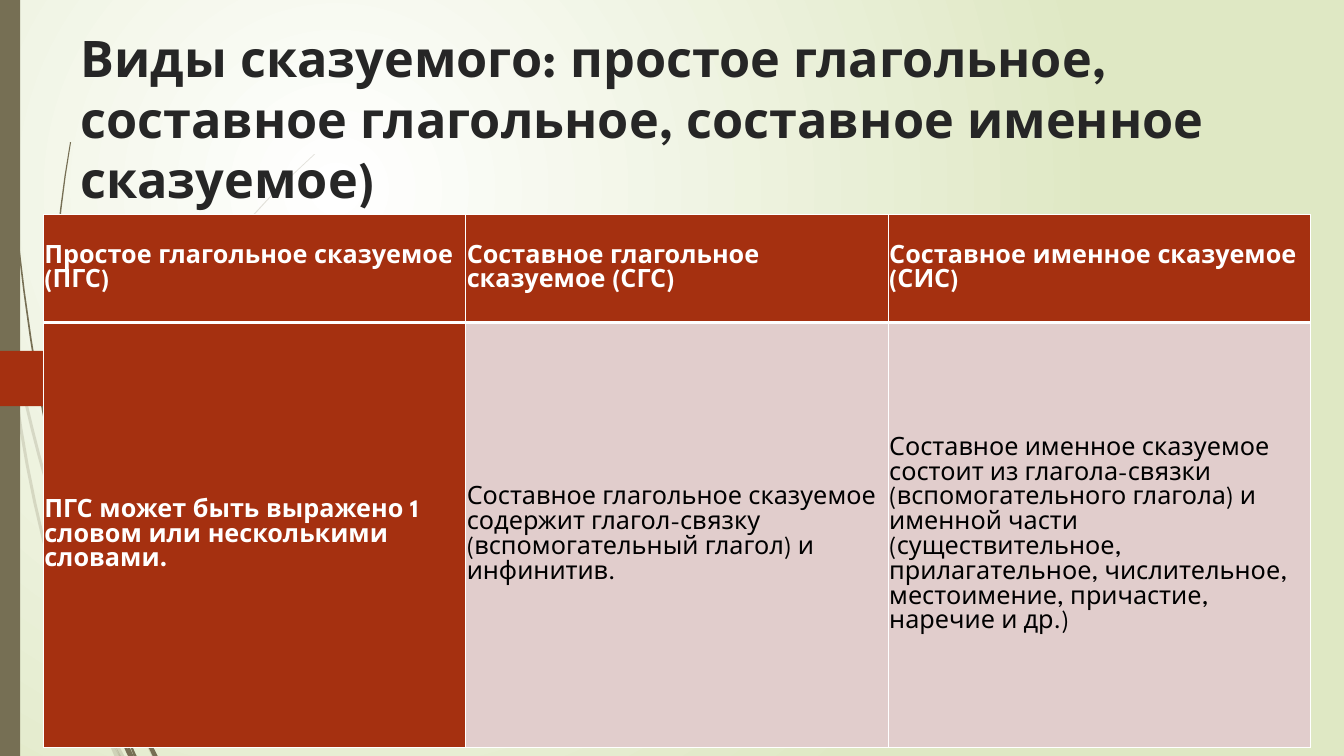
from collections import namedtuple

from lxml.etree import SubElement
from pptx import Presentation
from pptx.dml.color import RGBColor
from pptx.enum.shapes import MSO_SHAPE
from pptx.enum.text import MSO_ANCHOR
from pptx.oxml.ns import qn
from pptx.util import Inches, Pt

FONT = "League Spartan"
WHITE = RGBColor(0xFF, 0xFF, 0xFF)
BLACK = RGBColor(0x00, 0x00, 0x00)
CHARCOAL = RGBColor(0x26, 0x26, 0x26)
PALE_GREEN = RGBColor(0xDF, 0xE8, 0xC4)
OLIVE = RGBColor(0x76, 0x6F, 0x54)
RUST = RGBColor(0xA5, 0x30, 0x10)
PINK = RGBColor(0xE1, 0xCD, 0xCC)

# A blade of grass bends from start through middle to end; its width changes evenly
Blade = namedtuple("Blade", "start middle end start_width end_width")
BLADE_STEPS = 10

FADED_GRASS = [
    Blade((0.02, 2.88), (0.06, 3.17), (0.1, 3.5), 0.04, 0.01),
    Blade((0.15, 3.5), (0.45, 4.75), (0.84, 5.95), 0.03, 0.03),
    Blade((0.11, 3.5), (0.43, 5.35), (1.01, 7.14), 0.03, 0.03),
    Blade((0.87, 5.96), (1.59, 3.48), (3.12, 1.53), 0.03, 0.01),
    Blade((0.88, 6.03), (1.18, 6.77), (1.53, 7.5), 0.01, 0.05),
    Blade((0.93, 6.83), (1.02, 7.15), (1.19, 7.5), 0.01, 0.02),
    Blade((1.01, 7.14), (1.08, 7.33), (1.16, 7.5), 0, 0.05),
    Blade((1.05, 7.11), (1.13, 7.32), (1.21, 7.5), 0, 0.05),
]
SOLID_GRASS = [
    Blade((0.04, 0), (0.18, 2.4), (0.57, 4.81), 0.01, 0.02),
    Blade((0.6, 4.72), (0.53, 3.07), (0.7, 1.41), 0.03, 0.01),
    Blade((1.1, 6.45), (1.3, 6.98), (1.54, 7.5), 0.01, 0.05),
    Blade((1.1, 6.91), (1.2, 7.22), (1.31, 7.5), 0.01, 0.03),
    Blade((1.17, 7.22), (1.22, 7.36), (1.29, 7.5), 0, 0.04),
    Blade((1.22, 7.19), (1.28, 7.35), (1.34, 7.5), 0, 0.03),
]

TABLE_ROWS = [
    ["Простое глагольное сказуемое (ПГС)",
     "Составное глагольное сказуемое (СГС)",
     "Составное именное сказуемое (СИС)"],
    ["ПГС может быть выражено 1 словом или несколькими словами.",
     "Составное глагольное сказуемое содержит глагол-связку (вспомогательный глагол) "
     "и инфинитив.",
     "Составное именное сказуемое состоит из глагола-связки (вспомогательного глагола) "
     "и именной части (существительное, прилагательное, числительное, местоимение, "
     "причастие, наречие и др.)"],
]


def paint(shape, color):
    shape.shadow.inherit = False
    shape.fill.solid()
    shape.fill.fore_color.rgb = color
    shape.line.fill.background()


def add_blade(shapes, blade):
    """Draw a blade: down its left edge along a parabola, back up its right edge."""
    left_edge, right_edge = [], []
    for step in range(BLADE_STEPS + 1):
        t = step / BLADE_STEPS
        # Weights of the parabola that passes through middle at t = 0.5
        weights = ((1 - t) * (1 - 2 * t), 4 * t * (1 - t), t * (2 * t - 1))
        x, y = (sum(weight * value for weight, value in zip(weights, values))
                for values in zip(blade.start, blade.middle, blade.end))
        half_width = (blade.start_width * (1 - t) + blade.end_width * t) / 2
        left_edge.append((Inches(x - half_width), Inches(y)))
        right_edge.append((Inches(x + half_width), Inches(y)))
    outline = left_edge + right_edge[::-1]
    builder = shapes.build_freeform(*outline[0])
    builder.add_line_segments(outline[1:], close=True)
    shape = builder.convert_to_shape()
    paint(shape, OLIVE)
    return shape


presentation = Presentation()
presentation.slide_width = Inches(13.33)
presentation.slide_height = Inches(7.5)
slide = presentation.slides.add_slide(presentation.slide_layouts[6])

# Background: a round glow centred in the upper left quarter
background_fill = slide.background.fill
background_fill.gradient()
for stop, position, color in zip(background_fill.gradient_stops, (0, 1), (WHITE, PALE_GREEN)):
    stop.position = position
    stop.color.rgb = color
gradient = slide.element.find(".//" + qn("a:gradFill"))
gradient.remove(gradient.find(qn("a:lin")))
glow = SubElement(gradient, qn("a:path"), path="circle")
SubElement(glow, qn("a:fillToRect"), l="50000", t="50000", r="100000", b="100000")

# Grass: a faded group behind a solid one
for blades, opacity in ((FADED_GRASS, 20), (SOLID_GRASS, 100)):
    grass = slide.shapes.add_group_shape()
    for blade in blades:
        blade_shape = add_blade(grass.shapes, blade)
        fill_color = blade_shape.element.spPr.find(qn("a:solidFill"))[0]
        SubElement(fill_color, qn("a:alpha"), val=str(opacity * 1000))

# Side bar and number tab
side_bar = slide.shapes.add_shape(MSO_SHAPE.RECTANGLE, 0, 0, Inches(0.2), Inches(7.5))
paint(side_bar, OLIVE)
number_tab = slide.shapes.add_shape(MSO_SHAPE.PENTAGON, 0, Inches(3.48),
                                    Inches(1.74), Inches(0.55))
paint(number_tab, RUST)

# Title
title = slide.shapes.add_textbox(Inches(0.7), Inches(0.24), Inches(12.48), Inches(1.88))
title_frame = title.text_frame
title_frame.word_wrap = True
title_frame.vertical_anchor = MSO_ANCHOR.BOTTOM
title_frame.text = ("Виды сказуемого: простое глагольное, составное глагольное, "
                    "составное именное сказуемое)")
title_font = title_frame.paragraphs[0].runs[0].font
title_font.name = FONT
title_font.size = Pt(36)
title_font.bold = True
title_font.color.rgb = CHARCOAL

# Table of predicate kinds
table = slide.shapes.add_table(2, 3, Inches(0.43), Inches(2.13),
                               Inches(12.57), Inches(5.29)).table
for column in table.columns:
    column.width = Inches(4.19)
for row, height in zip(table.rows, (1.07, 4.22)):
    row.height = Inches(height)

for row_index, texts in enumerate(TABLE_ROWS):
    for column_index, text in enumerate(texts):
        is_heading = row_index == 0 or column_index == 0
        cell = table.cell(row_index, column_index)
        cell.fill.solid()
        cell.fill.fore_color.rgb = RUST if is_heading else PINK
        cell.vertical_anchor = MSO_ANCHOR.MIDDLE
        cell.margin_left = cell.margin_right = Inches(0.01)
        cell.margin_top = cell.margin_bottom = Inches(0.01)
        cell.text_frame.text = text
        paragraph = cell.text_frame.paragraphs[0]
        paragraph.line_spacing = 1.07
        font = paragraph.runs[0].font
        font.name = FONT
        font.size = Pt(18)
        font.bold = is_heading
        font.color.rgb = WHITE if is_heading else BLACK

        # White borders, thick between the heading row and the body
        properties = cell._tc.get_or_add_tcPr()
        thick_edge = "lnB" if row_index == 0 else "lnT"
        for position, edge in enumerate(("lnL", "lnR", "lnT", "lnB")):
            width = Pt(3) if edge == thick_edge else Pt(1)
            border = SubElement(properties, qn("a:" + edge), w=str(width))
            border_fill = SubElement(border, qn("a:solidFill"))
            SubElement(border_fill, qn("a:srgbClr"), val=str(WHITE))
            properties.insert(position, border)

presentation.save("out.pptx")
